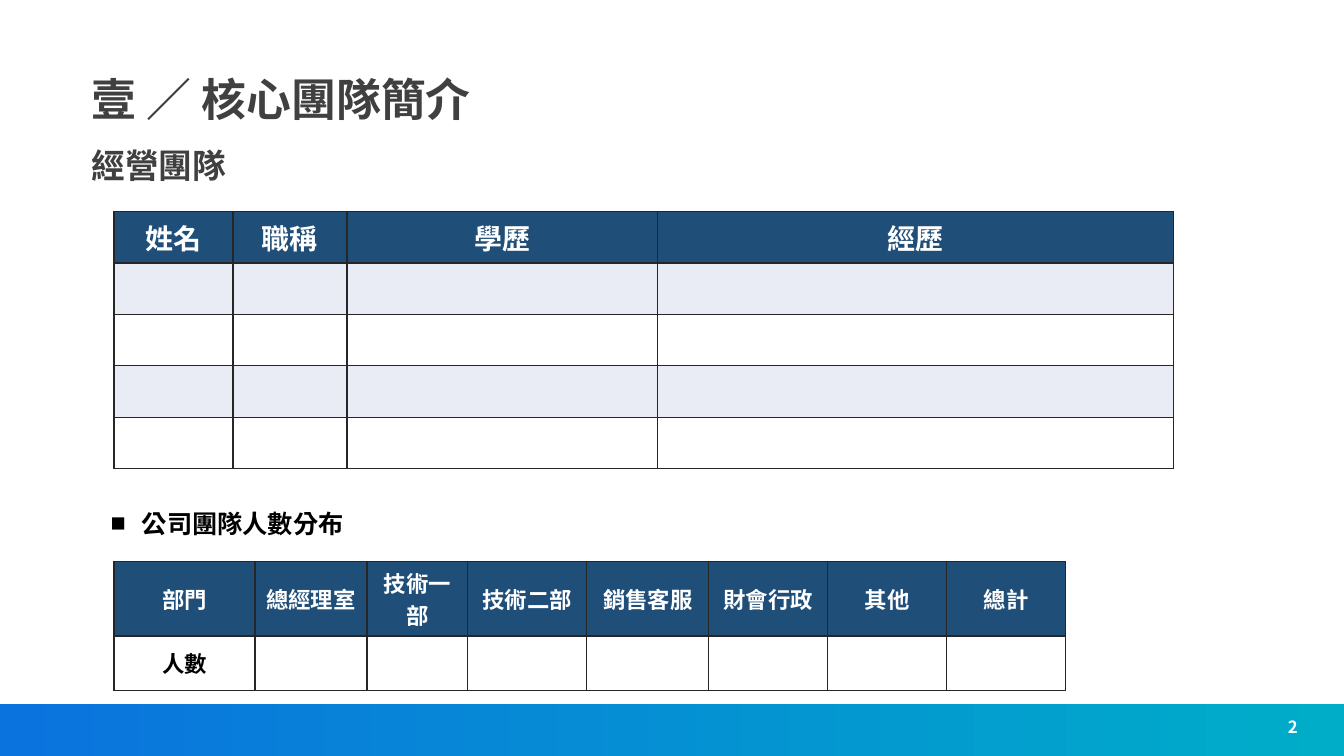
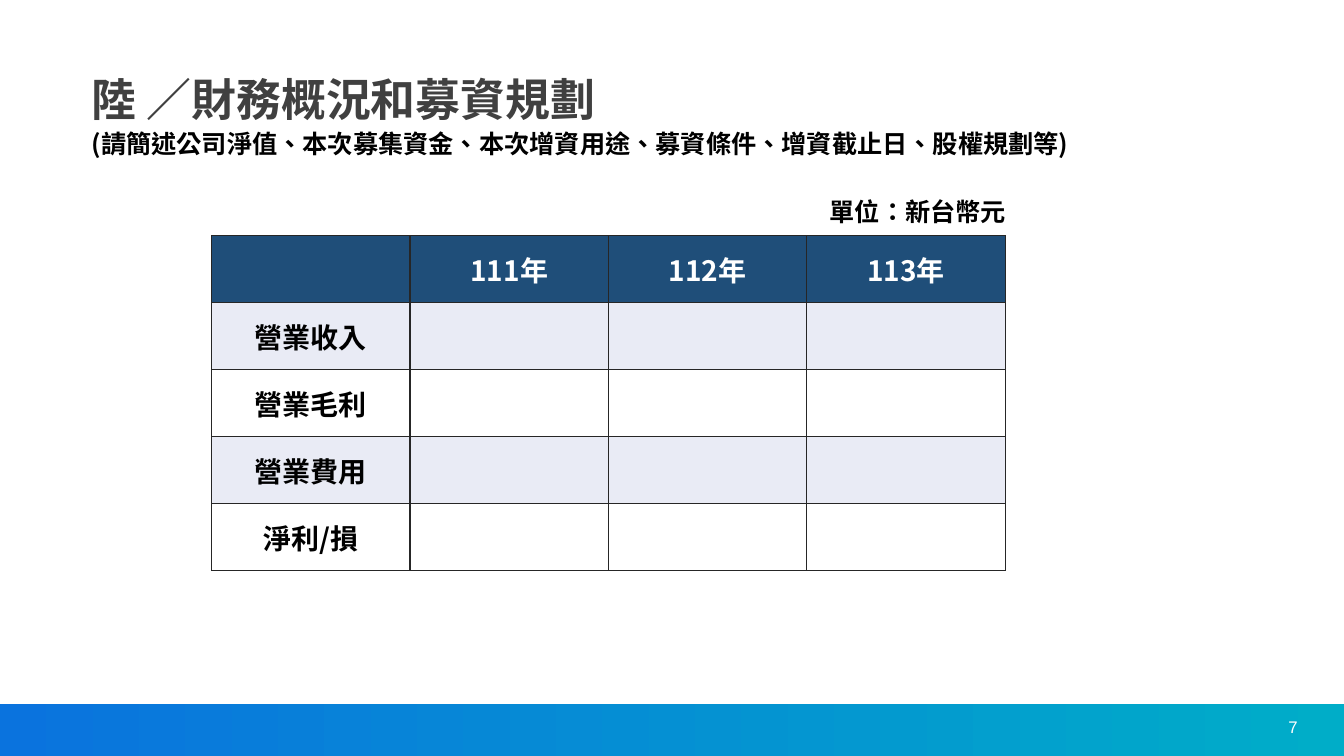
from collections import namedtuple
from dataclasses import dataclass

from lxml.etree import SubElement
from pptx import Presentation
from pptx.dml.color import RGBColor as Color
from pptx.enum.lang import MSO_LANGUAGE_ID as Language
from pptx.enum.shapes import MSO_SHAPE as Shape
from pptx.enum.text import MSO_ANCHOR as Anchor, MSO_AUTO_SIZE as AutoSize, PP_ALIGN as Align
from pptx.oxml.ns import qn
from pptx.util import Inches, Pt

Box = namedtuple("Box", "left top width height")


@dataclass(frozen=True)
class Theme:
    font: str = "Noto Sans CJK SC"
    symbol_font: str = "Arial"
    heading: str = "404040"
    black: str = "000000"
    white: str = "FFFFFF"
    header: str = "1F4E79"
    stripe: str = "E9EBF5"
    border: str = "262626"
    band_start: str = "0A73DE"
    band_end: str = "00ADC8"
    title_size: int = 32
    subtitle_size: int = 24
    table_size: int = 20
    note_size: int = 18
    small_table_size: int = 16
    number_size: int = 12


THEME = Theme()
SLIDE = Box(0, 0, 13.33, 7.5)
BAND = Box(0, 6.98, SLIDE.width, 0.52)
TITLE = Box(0.81, 0.67, 11.5, 0.63)
NUMBER = Box(9.97, 7.01, 3, 0.4)


def inches(box):
    return [Inches(length) for length in box]


def place(shape, box):
    shape.left, shape.top, shape.width, shape.height = inches(box)


def format_runs(paragraph, size, color, font_name=THEME.font, bold=True):
    """Style every run, with the same font for Latin and East Asian text."""
    for run in paragraph.runs:
        font = run.font
        font.name, font.size, font.bold = font_name, Pt(size), bold
        font.language_id = Language.TRADITIONAL_CHINESE
        font.color.rgb = Color.from_string(color)
        latin = font._element.find(qn("a:latin"))
        latin.addnext(latin.makeelement(qn("a:ea"), {"typeface": font_name}))


def set_bullet(paragraph, character=None, indent=0):
    """Give the paragraph a hanging bullet, or none."""
    properties = paragraph._p.get_or_add_pPr()
    properties.set("marL", str(Inches(indent)))
    properties.set("indent", str(-Inches(indent)))
    if character:
        SubElement(properties, qn("a:buFont"), typeface=THEME.symbol_font)
        SubElement(properties, qn("a:buChar"), char=character)
    else:
        SubElement(properties, qn("a:buNone"))


def add_band(presentation, slide):
    """Draw the footer band and move it to the master, behind its placeholders."""
    band = slide.shapes.add_shape(Shape.RECTANGLE, *inches(BAND))
    band.shadow.inherit = False
    band.line.fill.background()
    band.fill.gradient()
    band.fill.gradient_angle = 0
    colors = (THEME.band_start, THEME.band_end)
    for position, (stop, color) in enumerate(zip(band.fill.gradient_stops, colors)):
        stop.position = position
        stop.color.rgb = Color.from_string(color)
    presentation.slide_master.shapes.element.insert(2, band.element)


def add_title(slide, text):
    title = slide.shapes.title
    place(title, TITLE)
    frame = title.text_frame
    frame.text = text
    frame.auto_size = AutoSize.NONE
    frame.vertical_anchor = Anchor.BOTTOM
    paragraph = frame.paragraphs[0]
    paragraph.alignment = Align.LEFT
    paragraph.line_spacing = 0.9
    format_runs(paragraph, THEME.title_size, THEME.heading)


def add_subtitle(slide, box, text):
    body = slide.placeholders[1]
    place(body, box)
    frame = body.text_frame
    frame.text = text
    frame.auto_size = AutoSize.NONE
    paragraph = frame.paragraphs[0]
    paragraph.space_before = Pt(0)
    set_bullet(paragraph)
    format_runs(paragraph, THEME.subtitle_size, THEME.heading)


def add_text(slide, box, text, wrap=True):
    frame = slide.shapes.add_textbox(*inches(box)).text_frame
    frame.word_wrap = wrap
    frame.text = text
    return frame


def add_note(slide, box, text, bullet=None):
    frame = add_text(slide, box, text, wrap=bullet is None)
    frame.auto_size = AutoSize.SHAPE_TO_FIT_TEXT
    paragraph = frame.paragraphs[0]
    if bullet:
        set_bullet(paragraph, bullet, 0.31)
    format_runs(paragraph, THEME.note_size, THEME.black)


def add_number(slide, number, **style):
    frame = add_text(slide, NUMBER, str(number))
    frame.vertical_anchor = Anchor.MIDDLE
    paragraph = frame.paragraphs[0]
    paragraph.alignment = Align.RIGHT
    format_runs(paragraph, THEME.number_size, THEME.white, **style)


def set_borders(cell):
    properties = cell._tc.get_or_add_tcPr()
    for side in ("lnL", "lnR", "lnT", "lnB"):
        line = SubElement(properties, qn(f"a:{side}"), w=str(Pt(1)))
        fill = SubElement(line, qn("a:solidFill"))
        SubElement(fill, qn("a:srgbClr"), val=THEME.border)


def format_cell(cell, text, size, text_color, fill_color, side_margin):
    set_borders(cell)
    cell.fill.solid()
    cell.fill.fore_color.rgb = Color.from_string(fill_color)
    cell.vertical_anchor = Anchor.MIDDLE
    cell.margin_left = cell.margin_right = Inches(side_margin)
    if text:
        cell.text_frame.text = text
        paragraph = cell.text_frame.paragraphs[0]
        paragraph.alignment = Align.CENTER
        format_runs(paragraph, size, text_color)


def add_grid(slide, box, headers, row_labels, weights=None, size=THEME.table_size,
             striped=True, side_margin=0.1, header_height=None):
    """Fill the box with a header row and one labelled, otherwise empty row per label."""
    weights = weights or [1] * len(headers)
    rows = [headers] + [[label] + [""] * (len(headers) - 1) for label in row_labels]
    header_height = header_height or box.height / len(rows)
    row_height = (box.height - header_height) / len(row_labels)
    table = slide.shapes.add_table(len(rows), len(headers), *inches(box)).table
    for column, weight in zip(table.columns, weights):
        column.width = Inches(box.width * weight / sum(weights))
    for index, texts in enumerate(rows):
        if index == 0:
            height, text_color, fill_color = header_height, THEME.white, THEME.header
        else:
            height, text_color = row_height, THEME.black
            fill_color = THEME.stripe if striped and index % 2 else THEME.white
        table.rows[index].height = Inches(height)
        for cell, text in zip(table.rows[index].cells, texts):
            format_cell(cell, text, size, text_color, fill_color, side_margin)


def build_team_slide(slide):
    add_title(slide, "壹 ／ 核心團隊簡介")
    add_number(slide, 2)
    add_subtitle(slide, Box(TITLE.left, 1.39, 11.85, 0.6), "經營團隊")
    add_grid(slide, Box(1.13, 2.1, 10.51, 2.55), ["姓名", "職稱", "學歷", "經歷"],
             [""] * 4, weights=[1.18, 1.13, 3.08, 5.11], side_margin=0)
    add_note(slide, Box(1, 4.99, 2.54, 0.4), "公司團隊人數分布", bullet="■")
    departments = ["部門", "總經理室", "技術一部", "技術二部", "銷售客服", "財會行政", "其他", "總計"]
    add_grid(slide, Box(1.13, 5.57, 9.44, 1.28), departments, ["人數"],
             weights=[1.4, 1.11, 1, 1.18, 1.21, 1.18, 1.18, 1.18],
             size=THEME.small_table_size, striped=False, header_height=0.74)


def build_finance_slide(slide):
    add_title(slide, "陸 ／財務概況和募資規劃")
    add_number(slide, 7, font_name=THEME.symbol_font, bold=False)
    add_note(slide, Box(TITLE.left, 1.22, 10.95, 0.4),
             "(請簡述公司淨值、本次募集資金、本次增資用途、募資條件、增資截止日、股權規劃等)")
    add_grid(slide, Box(2.1, 2.34, 7.87, 3.32), ["", "111年", "112年", "113年"],
             ["營業收入", "營業毛利", "營業費用", "淨利/損"])
    add_note(slide, Box(8.13, 1.9, 1.97, 0.4), "單位：新台幣元")


def main():
    presentation = Presentation()
    presentation.slide_width = Inches(SLIDE.width)
    presentation.slide_height = Inches(SLIDE.height)
    title_and_content, title_only = (presentation.slide_layouts[i] for i in (1, 5))
    team_slide = presentation.slides.add_slide(title_and_content)
    add_band(presentation, team_slide)
    build_team_slide(team_slide)
    build_finance_slide(presentation.slides.add_slide(title_only))
    presentation.save("out.pptx")


if __name__ == "__main__":
    main()
